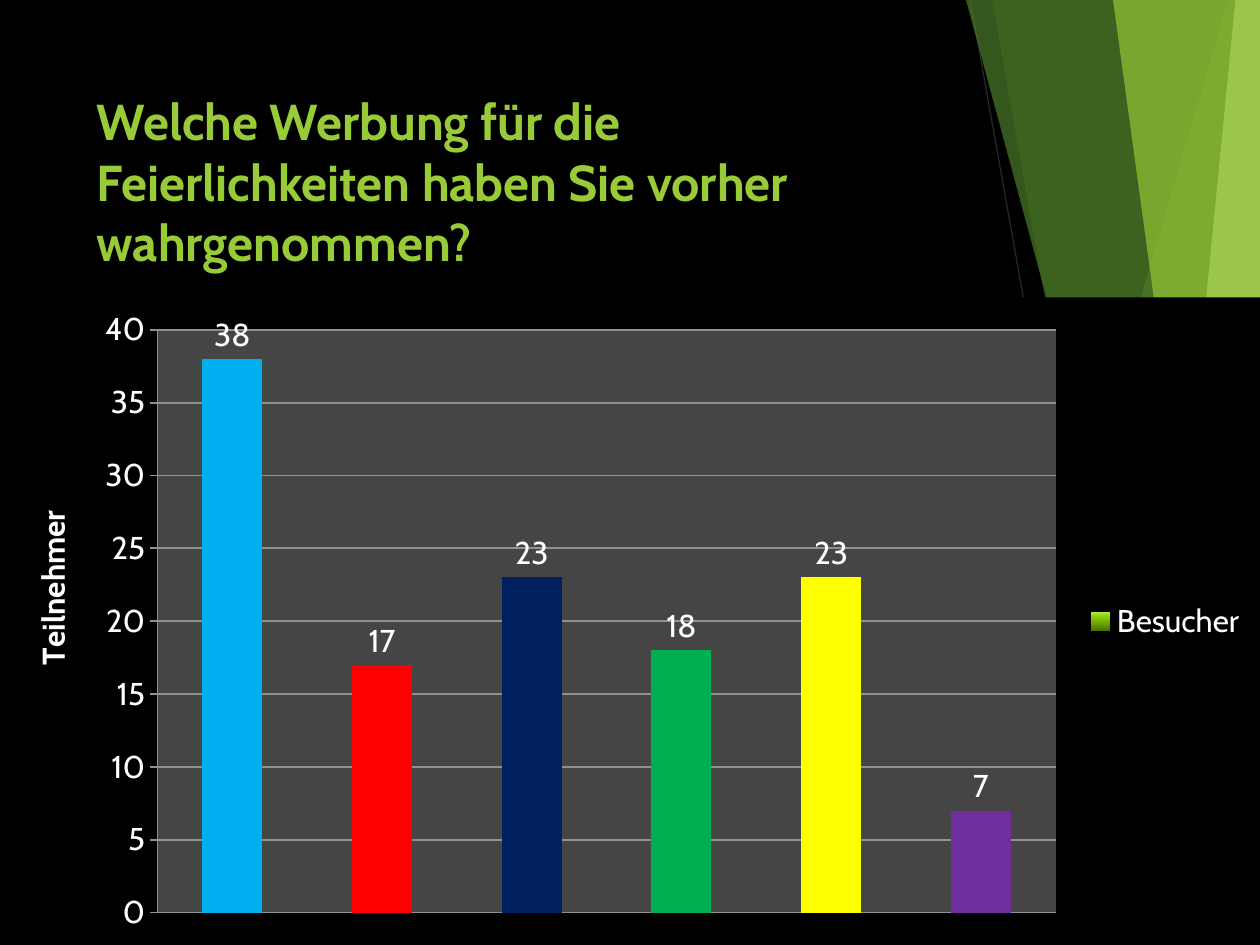
from dataclasses import dataclass

from lxml import etree
from pptx import Presentation
from pptx.chart import data as chart_data
from pptx.dml.color import RGBColor
from pptx.enum import chart as ch, shapes, text
from pptx.oxml import parse_xml
from pptx.oxml.ns import nsdecls, qn
from pptx.util import Pt

WIDTH, HEIGHT = 720, 540
FONT = "Cabin"
COLORS = {
    "black": "000000", "white": "FFFFFF", "plot": "454545", "grid": "919191",
    "thin": "262626", "lime": "99CB38", "leaf": "63A537", "forest": "4A7C29",
    "pale": "C2E088",
}
LEGEND_GRADIENT = ((0, "4B7200"), (50, "78B403"), (70, "8AC914"), (100, "A8F030"))


@dataclass
class Facet:
    points: list[tuple[float, float]]
    color: str
    opacity: int


@dataclass
class Bar:
    category: str
    visitors: int
    color: str


def band(top_x: float, bottom_x: float, color: str, opacity: int) -> Facet:
    """A facet from a slanted left edge to the right side of the slide."""
    points = [(top_x, 0), (bottom_x, HEIGHT), (WIDTH, HEIGHT), (WIDTH, 0)]
    return Facet(points, color, opacity)


def corner(bottom_x: float, right_y: float, color: str, opacity: int) -> Facet:
    """A triangle in the lower right corner."""
    points = [(bottom_x, HEIGHT), (WIDTH, right_y), (WIDTH, HEIGHT)]
    return Facet(points, color, opacity)


THIN_LINES = [(404, 540, 720, 329), (554.4, 0, 650.9, 540)]
FACETS = [
    Facet([(0, 316), (35, 540), (0, 540)], "lime", 85),
    band(702, 543, "lime", 30),
    band(567.4, 661.7, "lime", 20),
    corner(522.7, 309, "leaf", 72),
    band(552.2, 698.4, "forest", 70),
    band(706.3, 653, "pale", 70),
    band(635.8, 709.9, "lime", 65),
    corner(634.3, 385, "lime", 80),
]
BARS = [
    Bar("1", 38, "00B0F0"), Bar("2", 17, "FF0000"), Bar("3", 23, "002060"),
    Bar("4", 18, "00B050"), Bar("5", 23, "FFFF00"), Bar("6", 7, "7030A0"),
]


def rgb(name: str) -> RGBColor:
    return RGBColor.from_string(COLORS[name])


def draw_line(slide, x1: float, y1: float, x2: float, y2: float) -> None:
    line = slide.shapes.add_connector(
        shapes.MSO_CONNECTOR.STRAIGHT, Pt(x1), Pt(y1), Pt(x2), Pt(y2))
    line.line.color.rgb = rgb("thin")
    line.line.width = Pt(0.75)
    etree.SubElement(line.element.spPr, qn("a:effectLst"))


def draw_facet(slide, facet: Facet) -> None:
    builder = slide.shapes.build_freeform(*facet.points[0], scale=Pt(1))
    builder.add_line_segments(facet.points[1:], close=True)
    shape = builder.convert_to_shape()
    shape.shadow.inherit = False
    shape.line.fill.background()
    shape.fill.solid()
    shape.fill.fore_color.rgb = rgb(facet.color)
    color = shape.element.spPr.find(".//" + qn("a:srgbClr"))
    etree.SubElement(color, qn("a:alpha"), val=str(facet.opacity * 1000))


def format_title(title) -> None:
    title.left, title.top, title.width, title.height = Pt(48), Pt(48), Pt(500), Pt(104)
    frame = title.text_frame
    frame.word_wrap = True
    frame.auto_size = text.MSO_AUTO_SIZE.NONE
    frame.vertical_anchor = text.MSO_ANCHOR.TOP
    paragraph = frame.paragraphs[0]
    paragraph.alignment = text.PP_ALIGN.LEFT
    run = paragraph.add_run()
    run.text = "Welche Werbung für die Feierlichkeiten haben Sie vorher wahrgenommen?"
    style_font(run.font, 28.8, "lime", True)


def style_font(font, size: float, color: str, bold: bool = False) -> None:
    font.name, font.size, font.bold = FONT, Pt(size), bold
    font.color.rgb = rgb(color)


def area_fill(color: str):
    return parse_xml(
        f'<c:spPr {nsdecls("c", "a")}><a:solidFill><a:srgbClr val="{COLORS[color]}"/>'
        '</a:solidFill><a:ln><a:noFill/></a:ln></c:spPr>')


def manual_layout(**values):
    """Chart layout in fractions of the chart's size."""
    layout = parse_xml(f'<c:layout {nsdecls("c")}><c:manualLayout/></c:layout>')
    for tag, value in values.items():
        etree.SubElement(layout[0], qn(f"c:{tag}"), val=str(value))
    return layout


def replace_layout(parent, layout, index: int) -> None:
    for old in parent.findall(qn("c:layout")):
        parent.remove(old)
    parent.insert(index, layout)


def draw_chart(slide) -> None:
    data = chart_data.CategoryChartData()
    data.categories = [bar.category for bar in BARS]
    data.add_series("Besucher", [bar.visitors for bar in BARS])
    chart = slide.shapes.add_chart(
        ch.XL_CHART_TYPE.COLUMN_CLUSTERED, 0, Pt(170), Pt(WIDTH), Pt(370), data).chart
    chart.has_title = False
    style_font(chart.font, 18, "white")

    # Axes
    chart.category_axis.visible = False
    axis = chart.value_axis
    axis.minimum_scale, axis.maximum_scale, axis.major_unit = 0, 40, 5
    axis.major_tick_mark = ch.XL_TICK_MARK.OUTSIDE
    style_font(axis.tick_labels.font, 18, "white")
    for line in (axis.format.line, axis.major_gridlines.format.line):
        line.color.rgb = rgb("grid")
        line.width = Pt(1)
    frame = axis.axis_title.text_frame
    run = frame.paragraphs[0].add_run()
    run.text = "Teilnehmer"
    style_font(run.font, 18, "white", True)
    body = axis.axis_title.element if hasattr(axis.axis_title, "element") \
        else axis.axis_title._element
    properties = body.find(".//" + qn("a:bodyPr"))
    properties.set("rot", "-5400000")
    properties.set("vert", "horz")
    replace_layout(body, manual_layout(xMode="edge", yMode="edge", x=0.02, y=0.32), 1)

    # Bars and their labels
    plot = chart.plots[0]
    plot.vary_by_categories = False
    plot.gap_width = 150
    series = plot.series[0]
    series.format.fill.gradient()
    gradient = series.format.fill._xPr.find(qn("a:gradFill"))
    stops = "".join(f'<a:gs pos="{position * 1000}"><a:srgbClr val="{color}"/></a:gs>'
                    for position, color in LEGEND_GRADIENT)
    gradient.getparent().replace(gradient, parse_xml(
        f'<a:gradFill {nsdecls("a")}><a:gsLst>{stops}</a:gsLst>'
        '<a:lin ang="16200000" scaled="0"/></a:gradFill>'))
    for index, bar in enumerate(BARS):
        fill = series.points[index].format.fill
        fill.solid()
        fill.fore_color.rgb = RGBColor.from_string(bar.color)
    labels = series.data_labels
    labels.show_value = True
    labels.position = ch.XL_LABEL_POSITION.OUTSIDE_END
    style_font(labels.font, 18, "white")

    # Legend and backgrounds
    chart.has_legend = True
    chart.legend.position = ch.XL_LEGEND_POSITION.RIGHT
    chart.legend.include_in_layout = False
    style_font(chart.legend.font, 18, "white")
    chart_node = chart.element.find(qn("c:chart"))
    chart_node.addnext(area_fill("black"))
    plot_area = chart_node.find(qn("c:plotArea"))
    plot_area.append(area_fill("plot"))
    replace_layout(plot_area, manual_layout(
        layoutTarget="inner", xMode="edge", yMode="edge",
        x=0.125, y=0.05, w=0.713, h=0.9), 0)


def main() -> None:
    presentation = Presentation()
    presentation.slide_width, presentation.slide_height = Pt(WIDTH), Pt(HEIGHT)
    slide = presentation.slides.add_slide(presentation.slide_layouts[5])
    slide.background.fill.solid()
    slide.background.fill.fore_color.rgb = rgb("black")

    # Faceted decoration, then the title in front of it
    for line in THIN_LINES:
        draw_line(slide, *line)
    for facet in FACETS:
        draw_facet(slide, facet)
    title = slide.shapes.title
    format_title(title)
    title.element.getparent().append(title.element)

    draw_chart(slide)
    presentation.save("out.pptx")


if __name__ == "__main__":
    main()
